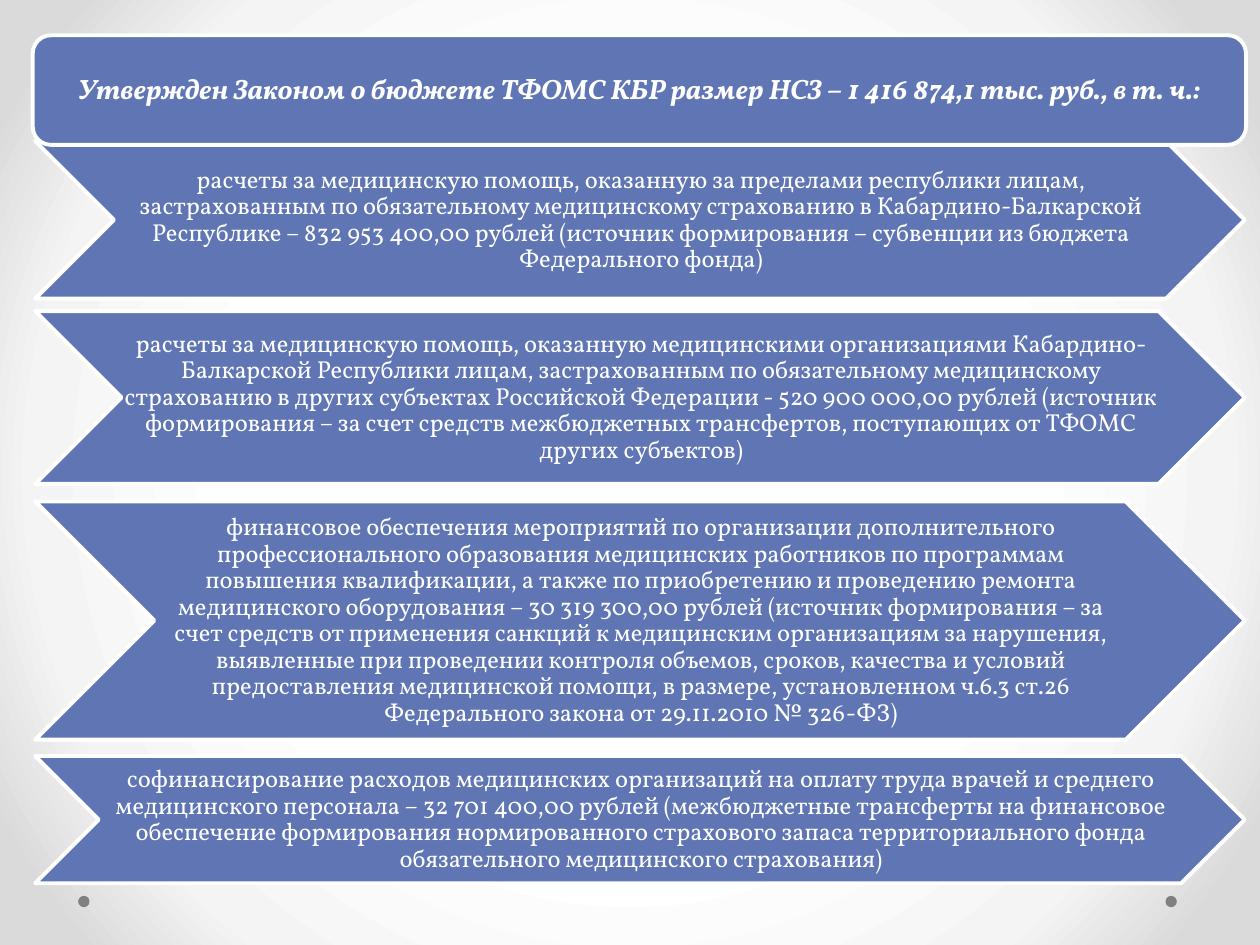
from lxml.etree import SubElement
from pptx import Presentation
from pptx.dml.color import RGBColor
from pptx.enum.shapes import MSO_SHAPE as Shape
from pptx.enum.text import MSO_ANCHOR as Anchor, PP_ALIGN as Align
from pptx.oxml.ns import qn
from pptx.util import Inches, Pt

COLORS = {
    "panel": "6076B4",
    "white": "FFFFFF",
    "dot": "808080",
    "pale": "F4F4F4",
    "edge": "DADADA",
}
FONT = "Vollkorn"
BACKGROUND_STOPS = [(50, "white"), (76, "pale"), (92, "edge")]

TITLE = "Утвержден Законом о бюджете ТФОМС КБР размер НСЗ – 1 416 874,1 тыс. руб., в т. ч.:"
TITLE_BOX = (0.26, 0.28, 9.63, 0.87)

CHEVRON_LEFT, CHEVRON_WIDTH = 0.28, 9.6
CHEVRONS = [
    (1.12, 1.25,
     "расчеты за медицинскую помощь, оказанную за пределами республики лицам, "
     "застрахованным по обязательному медицинскому страхованию в Кабардино-Балкарской "
     "Республике – 832 953 400,00 рублей (источник формирования – субвенции из бюджета "
     "Федерального фонда)"),
    (2.47, 1.37,
     "расчеты за медицинскую помощь, оказанную медицинскими организациями "
     "Кабардино-Балкарской Республики лицам, застрахованным по обязательному медицинскому "
     "страхованию в других субъектах Российской Федерации - 520 900 000,00 рублей "
     "(источник формирования – за счет средств межбюджетных трансфертов, поступающих от "
     "ТФОМС других субъектов)"),
    (3.98, 1.89,
     "финансовое обеспечения мероприятий по организации дополнительного "
     "профессионального образования медицинских работников по программам "
     "повышения квалификации, а также по приобретению и проведению ремонта "
     "медицинского оборудования – 30 319 300,00 рублей (источник формирования – за "
     "счет средств от применения санкций к медицинским организациям за нарушения, "
     "выявленные при проведении контроля объемов, сроков, качества и условий "
     "предоставления медицинской помощи, в размере, установленном ч.6.3 ст.26 "
     "Федерального закона от 29.11.2010 № 326-ФЗ)"),
    (6.0, 1.01,
     "софинансирование расходов медицинских организаций на оплату труда врачей и среднего "
     "медицинского персонала – 32 701 400,00 рублей (межбюджетные трансферты на финансовое "
     "обеспечение формирования нормированного страхового запаса территориального фонда "
     "обязательного медицинского страхования)"),
]
DOT_LEFTS, DOT_TOP, DOT_SIZE = (9.25, 0.62), 7.11, 0.09


def rgb(name):
    return RGBColor.from_string(COLORS[name])


def paint_background(slide):
    slide.background.fill.gradient()
    gradient = next(slide.element.iter(qn("a:gradFill")))
    for child in list(gradient):
        gradient.remove(child)
    stops = SubElement(gradient, qn("a:gsLst"))
    for position, color in BACKGROUND_STOPS:
        stop = SubElement(stops, qn("a:gs"), pos=str(position * 1000))
        SubElement(stop, qn("a:srgbClr"), val=COLORS[color])
    circle = SubElement(gradient, qn("a:path"))
    circle.set("path", "circle")
    center = SubElement(circle, qn("a:fillToRect"))
    for side in "ltrb":
        center.set(side, "50000")


def add_filled(slide, kind, box, color):
    shape = slide.shapes.add_shape(kind, *map(Inches, box))
    shape.shadow.inherit = False
    shape.fill.solid()
    shape.fill.fore_color.rgb = rgb(color)
    shape.line.fill.background()
    return shape


def add_panel(slide, kind, box, text, size, insets, emphasis=False):
    shape = add_filled(slide, kind, box, "panel")
    shape.line.color.rgb = rgb("white")
    shape.line.width = Pt(2.25)
    frame = shape.text_frame
    frame.word_wrap = True
    frame.vertical_anchor = Anchor.MIDDLE
    (frame.margin_left, frame.margin_top,
     frame.margin_right, frame.margin_bottom) = map(Inches, insets)
    paragraph = frame.paragraphs[0]
    paragraph.alignment = Align.CENTER
    paragraph.line_spacing = 0.9
    run = paragraph.add_run()
    run.text = text
    font = run.font
    font.name = FONT
    font.size = Pt(size)
    font.bold = font.italic = emphasis
    font.color.rgb = rgb("white")


def main():
    presentation = Presentation()
    presentation.slide_width = Inches(10)
    presentation.slide_height = Inches(7.5)
    slide = presentation.slides.add_slide(presentation.slide_layouts[6])
    paint_background(slide)
    for left in DOT_LEFTS:
        add_filled(slide, Shape.OVAL, (left, DOT_TOP, DOT_SIZE, DOT_SIZE), "dot")
    for top, height, text in CHEVRONS:
        box = (CHEVRON_LEFT, top, CHEVRON_WIDTH, height)
        add_panel(slide, Shape.CHEVRON, box, text, 14, (0.02, 0.01, 0, 0.01))
    add_panel(slide, Shape.ROUNDED_RECTANGLE, TITLE_BOX, TITLE, 16, (0.07,) * 4, True)
    presentation.save("out.pptx")


if __name__ == "__main__":
    main()
